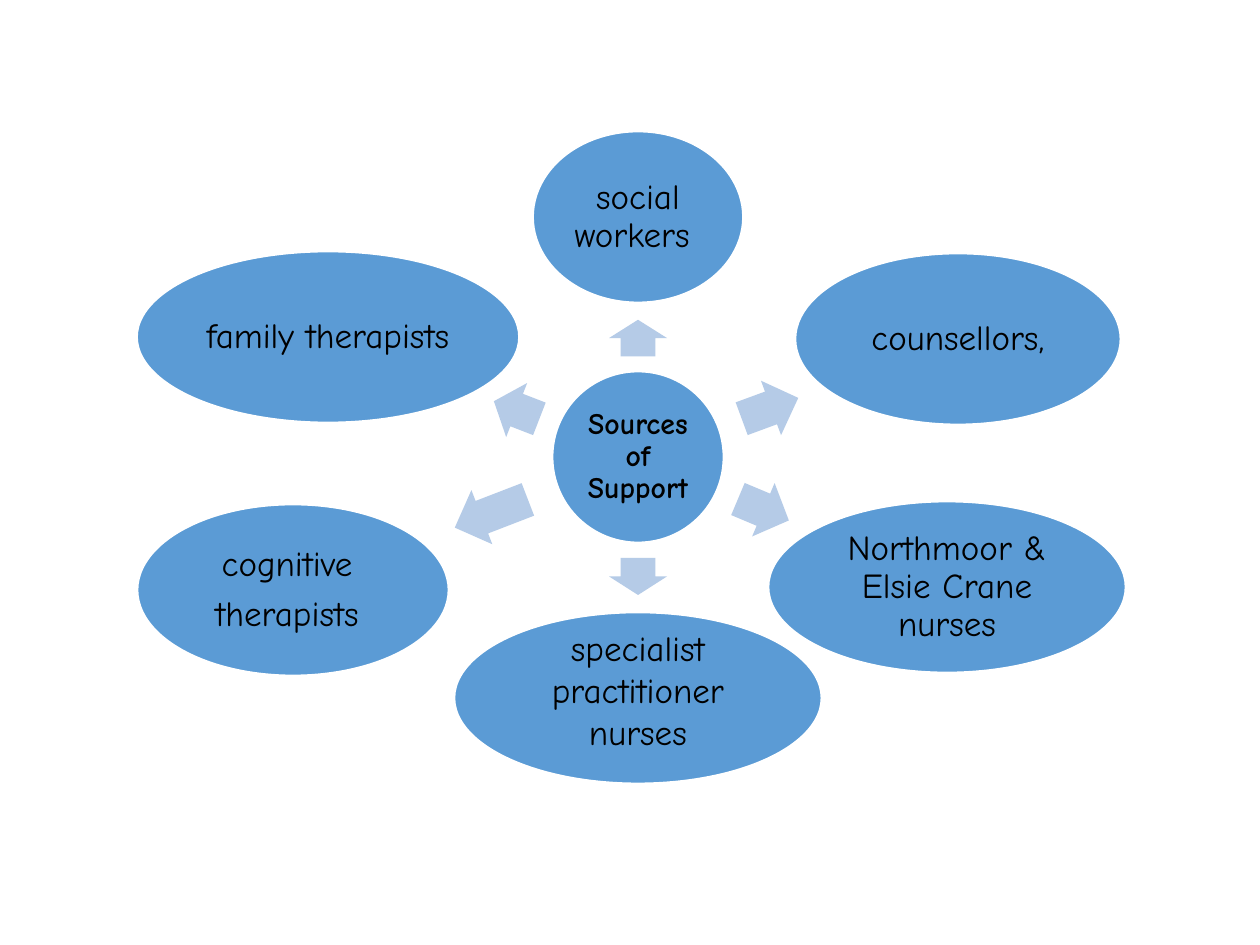
from math import atan2, cos, degrees, hypot, sin

from pptx import Presentation
from pptx.dml.color import RGBColor
from pptx.enum.shapes import MSO_SHAPE
from pptx.enum.text import MSO_ANCHOR, PP_ALIGN
from pptx.util import Pt

SCALE = 914400 / 126
SIZE = 171
HUB = (638, 457)

# centre x, centre y, width, paragraphs, text format
NODES = [
    (638, 217, 210, ["social workers "], {}),
    (958, 339, 325, ["counsellors,"], {}),
    (947, 587, 357, ["Northmoor & Elsie Crane nurses"], {}),
    (638, 698, 367, ["specialist practitioner nurses"], {"lead": 1.0, "lift": 9}),
    (293, 590, 311, ["cognitive ", "therapists "], {}),
    (328, 337, 382, ["family therapists"], {}),
]


def px(n):
    return round(n * SCALE)


def color(code):
    return RGBColor.from_string(code)


class Deck:
    """Holds the style and the current slide."""
    font, ink = "Comic Neue", "000000"
    blue, pale, white = "5B9BD5", "B5CBE7", "FFFFFF"

    def __init__(self):
        self.prs = Presentation()
        self.prs.slide_width, self.prs.slide_height = px(1260), px(945)
        self.slide = self.prs.slides.add_slide(self.prs.slide_layouts[6])

    def shape(self, kind, x, y, w, h, fill, line=None):
        """Add a preset shape centred on x, y."""
        item = self.slide.shapes.add_shape(
            kind, px(x - w / 2), px(y - h / 2), px(w), px(h))
        item.shadow.inherit = False
        item.fill.solid()
        item.fill.fore_color.rgb = color(fill)
        if line:
            item.line.color.rgb = color(line)
            item.line.width = Pt(1)
        else:
            item.line.fill.background()
        return item

    def text(self, item, paras, size=20, bold=False, lead=0.9, pad=4, lift=0):
        """Write paragraphs in a shape, moved up by lift."""
        frame = item.text_frame
        frame.word_wrap = True
        frame.vertical_anchor = MSO_ANCHOR.MIDDLE
        frame.margin_left = frame.margin_right = frame.margin_top = px(pad)
        frame.margin_bottom = px(pad + 2 * lift)
        for i, words in enumerate(paras):
            para = frame.add_paragraph() if i else frame.paragraphs[0]
            para.alignment = PP_ALIGN.CENTER
            para.line_spacing = lead
            para.space_before = Pt(7 if i else 0)
            run = para.add_run()
            run.text = words
            run.font.name, run.font.size, run.font.bold = self.font, Pt(size), bold
            run.font.color.rgb = color(self.ink)

    def oval(self, x, y, w, paras, **style):
        item = self.shape(MSO_SHAPE.OVAL, x, y, w, SIZE, self.blue, self.white)
        self.text(item, paras, **style)

    def arrow(self, x, y, w):
        """Fill about half of the gap between the hub and the oval at x, y."""
        dx, dy = x - HUB[0], y - HUB[1]
        turn = atan2(dy, dx)
        reach = 1 / hypot(cos(turn) * 2 / w, sin(turn) * 2 / SIZE)
        gap = hypot(dx, dy) - reach - SIZE / 2
        mid = SIZE / 2 + 0.485 * gap
        item = self.shape(MSO_SHAPE.RIGHT_ARROW, HUB[0] + mid * cos(turn),
                          HUB[1] + mid * sin(turn), 0.53 * gap, 58, self.pale)
        item.adjustments[0], item.adjustments[1] = 0.6, 0.5
        item.rotation = round(degrees(turn), 1) % 360


def main():
    deck = Deck()
    deck.oval(*HUB, SIZE, ["Sources of Support"], size=17, bold=True, pad=3)
    for x, y, w, paras, style in NODES:
        deck.arrow(x, y, w)
        deck.oval(x, y, w, paras, **style)
    deck.prs.save("out.pptx")


if __name__ == "__main__":
    main()
